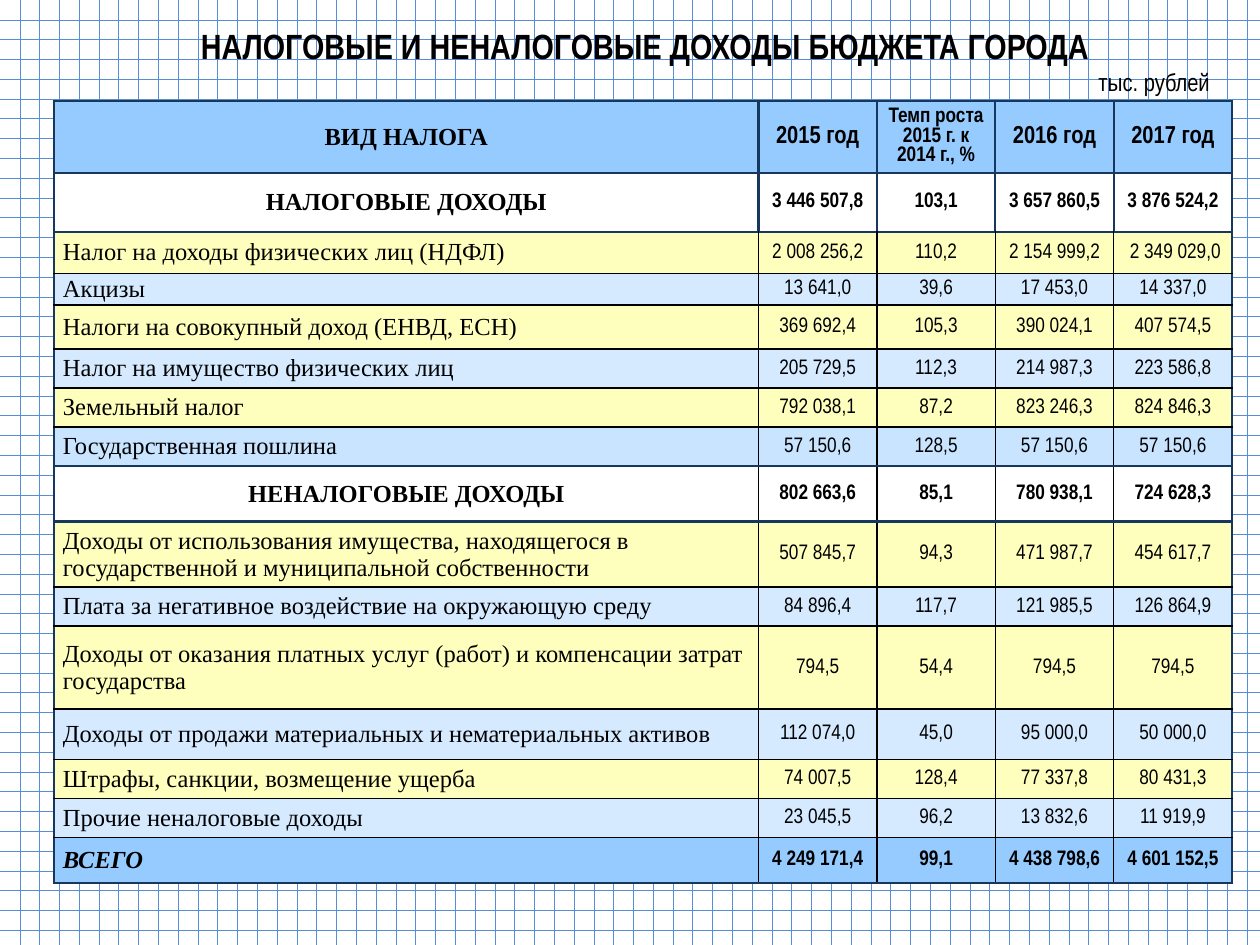
from pptx import Presentation
from pptx import util as u
from pptx.dml.color import RGBColor
from pptx.enum import dml, text
from pptx.oxml import parse_xml
from pptx.oxml.ns import nsdecls

BLACK = RGBColor(0x00, 0x00, 0x00)
NAVY = RGBColor(0x17, 0x37, 0x5E)
GRID = RGBColor(0x55, 0x8E, 0xD5)
WHITE = RGBColor(0xFF, 0xFF, 0xFF)
BLUE = RGBColor(0x96, 0xCB, 0xFF)
CREAM = RGBColor(0xFF, 0xFF, 0xBD)
PALE = RGBColor(0xD5, 0xEA, 0xFF)
SKY = RGBColor(0xC9, 0xE4, 0xFF)

SERIF = "Times New Roman"
SANS = "Arial Narrow"
LEFT, MID = text.PP_ALIGN.LEFT, text.PP_ALIGN.CENTER

WIDTHS = [5.59, 0.94, 0.94, 0.94, 0.94]
THICK = {0, 1, 2, 8, 9, 16}
ROWS = [
    ("head", 0.43, BLUE, "ВИД НАЛОГА", "2015 год", "Темп роста 2015 г. к 2014 г., %", "2016 год", "2017 год"),
    ("sum", 0.47, WHITE, "НАЛОГОВЫЕ ДОХОДЫ", "3 446 507,8", "103,1", "3 657 860,5", "3 876 524,2"),
    ("item", 0.33, CREAM, "Налог на доходы физических лиц (НДФЛ)", "2 008 256,2", "110,2", "2 154 999,2", " 2 349 029,0"),
    ("item", 0.25, PALE, "Акцизы", "13 641,0", "39,6", "17 453,0", "14 337,0"),
    ("item", 0.35, CREAM, "Налоги на совокупный доход (ЕНВД, ЕСН)", "369 692,4", "105,3", "390 024,1", "407 574,5"),
    ("item", 0.31, PALE, "Налог на имущество физических лиц", "205 729,5", "112,3", "214 987,3", "223 586,8"),
    ("item", 0.31, CREAM, "Земельный налог", "792 038,1", "87,2", "823 246,3", "824 846,3"),
    ("item", 0.31, SKY, "Государственная пошлина", "57 150,6", "128,5", "57 150,6", "57 150,6"),
    ("sum", 0.44, WHITE, "НЕНАЛОГОВЫЕ ДОХОДЫ", "802 663,6", "85,1", "780 938,1", "724 628,3"),
    ("item", 0.52, CREAM, "Доходы от использования имущества, находящегося в государственной и муниципальной собственности",
     "507 845,7", "94,3", "471 987,7", "454 617,7"),
    ("item", 0.31, PALE, "Плата за негативное воздействие на окружающую среду", "84 896,4", "117,7", "121 985,5", "126 864,9"),
    ("item", 0.66, CREAM, "Доходы от оказания платных услуг (работ) и компенсации затрат государства",
     "794,5", "54,4", "794,5", "794,5"),
    ("item", 0.4, PALE, "Доходы от продажи материальных и нематериальных активов", "112 074,0", "45,0", "95 000,0", "50 000,0"),
    ("item", 0.31, CREAM, "Штрафы, санкции, возмещение ущерба", "74 007,5", "128,4", "77 337,8", "80 431,3"),
    ("item", 0.31, PALE, "Прочие неналоговые доходы", "23 045,5", "96,2", "13 832,6", "11 919,9"),
    ("total", 0.36, BLUE, "ВСЕГО", "4 249 171,4", "99,1", "4 438 798,6", "4 601 152,5"),
]


def write(frame, words, size=14, font=SANS, bold=False, italic=False, align=MID):
    para = frame.paragraphs[0]
    para.alignment = align
    run = para.add_run()
    run.text = words
    run.font.size = u.Pt(size)
    run.font.name = font
    run.font.bold = bold
    run.font.italic = italic
    run.font.color.rgb = BLACK


def place(shape, box):
    shape.left, shape.top, shape.width, shape.height = map(u.Inches, box)


def edge(cell, side, thick):
    color, width = (NAVY, 1.5) if thick else (BLACK, 1)
    cell._tc.get_or_add_tcPr().append(parse_xml(
        f'<a:ln{side} {nsdecls("a")} w="{u.Pt(width)}"><a:solidFill>'
        f'<a:srgbClr val="{color}"/></a:solidFill></a:ln{side}>'))


def border(cell, row, col):
    last = len(WIDTHS) - 1
    edge(cell, "L", row < 2 or col == 0)
    edge(cell, "R", row < 2 or col == last)
    edge(cell, "T", row in THICK)
    edge(cell, "B", row + 1 in THICK)


def fill_cell(cell, words, kind, row, col):
    cell.vertical_anchor = text.MSO_ANCHOR.MIDDLE
    cell.margin_left = cell.margin_right = u.Inches(0.07)
    pad = 0 if kind == "item" and row > 2 else 0.05
    cell.margin_top = cell.margin_bottom = u.Inches(pad)
    name = col == 0
    big = name or (kind == "head" and col != 2)
    write(cell.text_frame, words,
          size=14 if big else 12,
          font=SERIF if name else SANS,
          bold=kind != "item",
          italic=name and kind == "total",
          align=LEFT if name and kind in ("item", "total") else MID)


def add_table(slide, box):
    grid = slide.shapes.add_table(len(ROWS), len(WIDTHS), *map(u.Inches, box)).table
    grid.first_row = grid.horz_banding = False
    for col, width in zip(grid.columns, WIDTHS):
        col.width = u.Inches(width)
    for row, (kind, height, color, *words) in enumerate(ROWS):
        grid.rows[row].height = u.Inches(height)
        for col, word in enumerate(words):
            cell = grid.cell(row, col)
            fill_cell(cell, word, kind, row, col)
            border(cell, row, col)
            cell.fill.solid()
            cell.fill.fore_color.rgb = color


def add_title(slide, box):
    title = slide.shapes.title
    place(title, box)
    title.text_frame.vertical_anchor = text.MSO_ANCHOR.MIDDLE
    write(title.text_frame, "НАЛОГОВЫЕ И НЕНАЛОГОВЫЕ ДОХОДЫ БЮДЖЕТА ГОРОДА", size=20, bold=True)


def add_unit(slide, box):
    frame = slide.shapes.add_textbox(*map(u.Inches, box)).text_frame
    frame.word_wrap = True
    frame.auto_size = text.MSO_AUTO_SIZE.SHAPE_TO_FIT_TEXT
    frame.vertical_anchor = text.MSO_ANCHOR.MIDDLE
    write(frame, "тыс. рублей", align=text.PP_ALIGN.JUSTIFY)


def add_ground(slide):
    fill = slide.background.fill
    fill.patterned()
    fill.pattern = dml.MSO_PATTERN.DOTTED_GRID
    fill.fore_color.rgb = GRID
    fill.back_color.rgb = WHITE


def main():
    deck = Presentation()
    deck.slide_width, deck.slide_height = u.Inches(10), u.Inches(7.5)
    slide = deck.slides.add_slide(deck.slide_layouts[5])
    add_ground(slide)
    add_table(slide, (0.43, 0.8, 9.37, 6.41))
    add_unit(slide, (8.62, 0.48, 1.1, 0.34))
    add_title(slide, (0.83, 0.12, 8.58, 0.48))
    deck.save("out.pptx")


if __name__ == "__main__":
    main()
